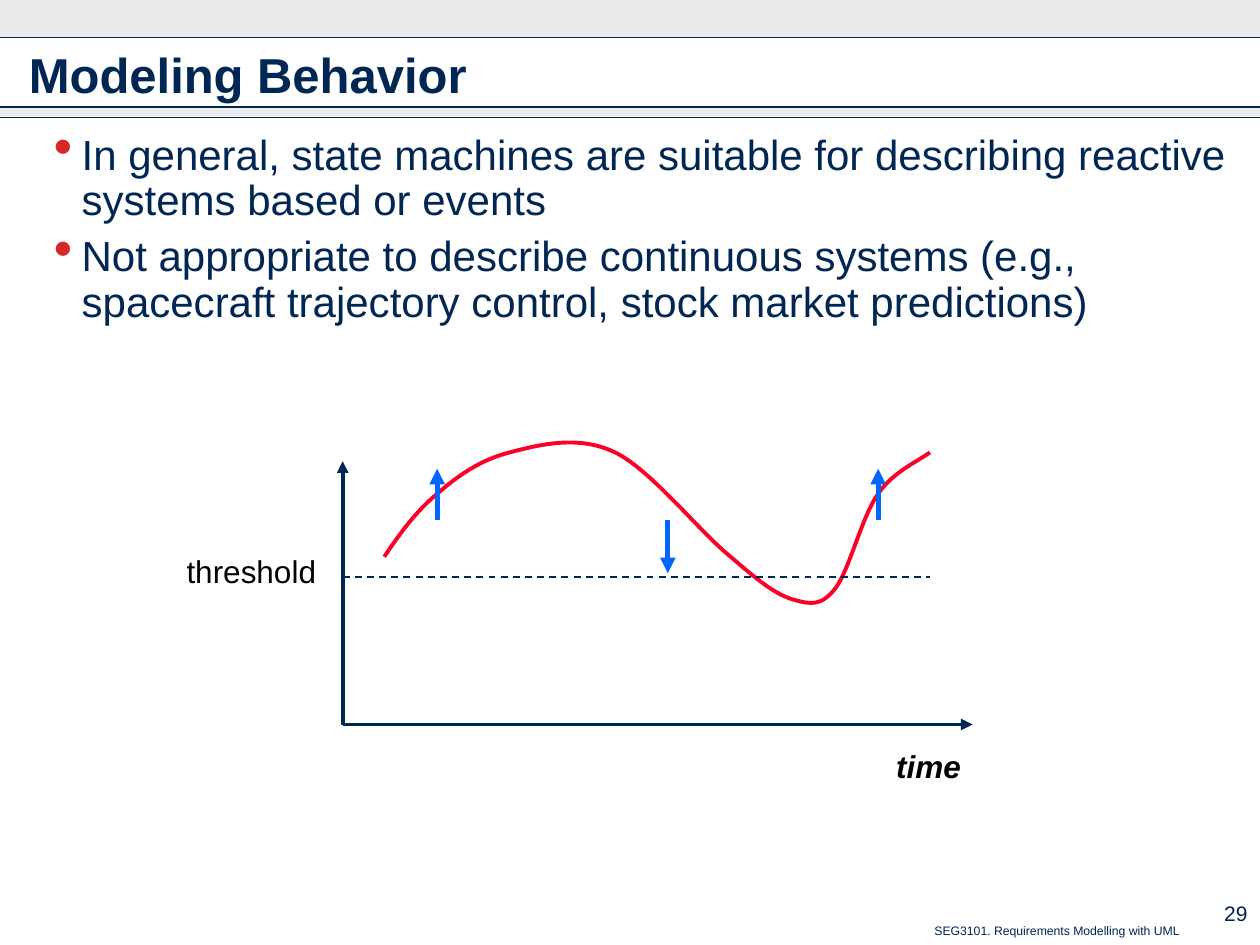
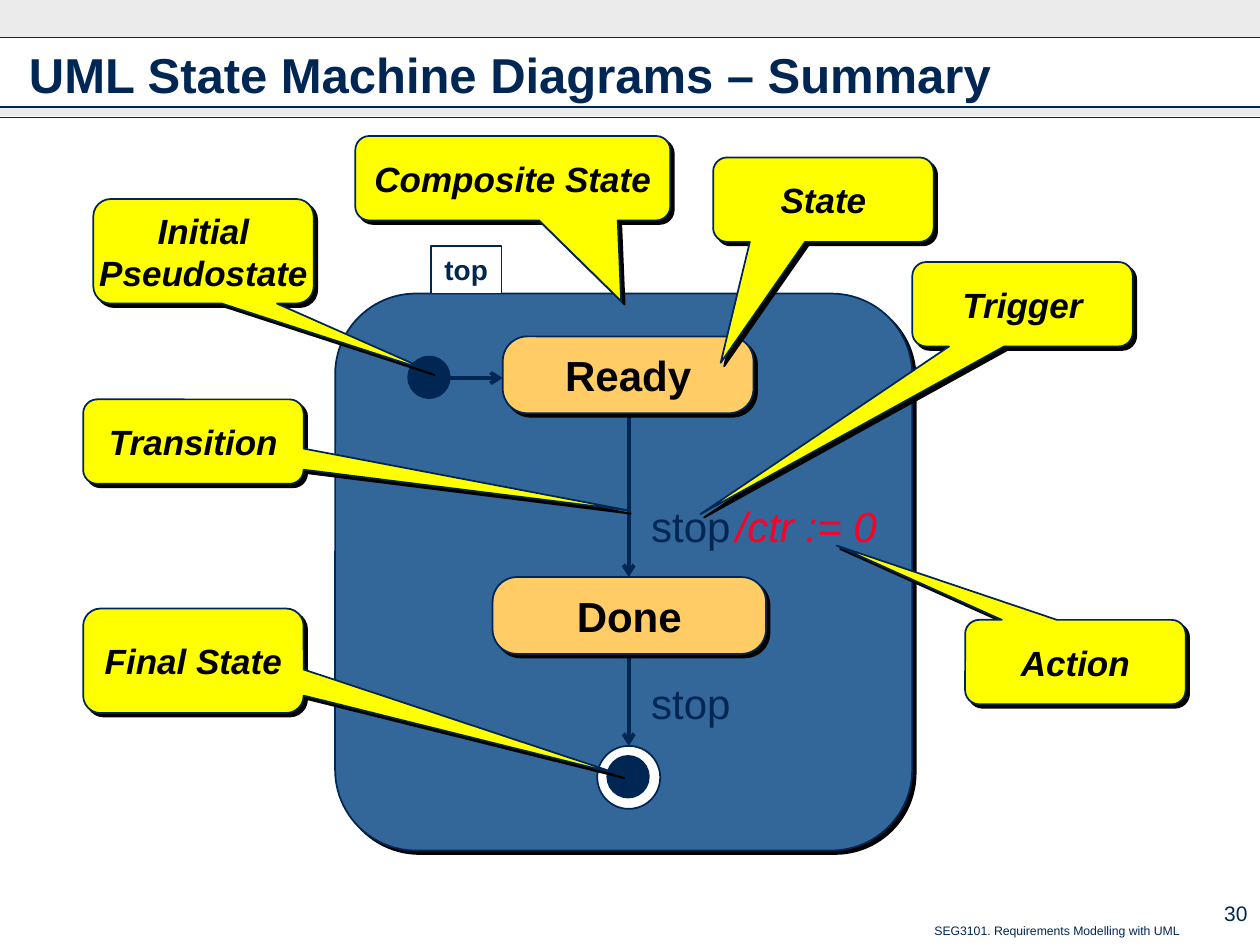
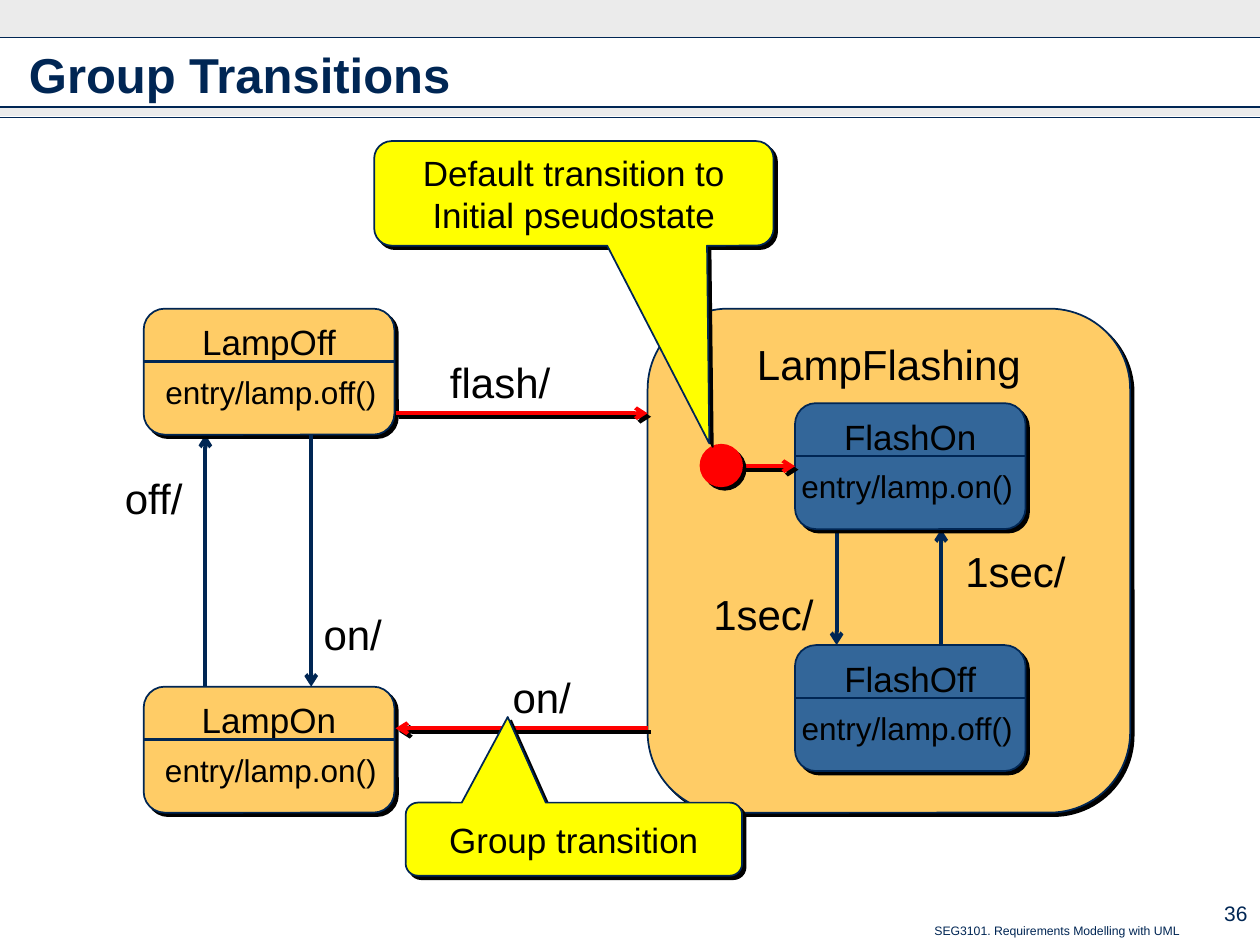
from dataclasses import dataclass
from typing import NamedTuple

from lxml.etree import SubElement
from pptx import Presentation
from pptx.dml.color import RGBColor
from pptx.enum.dml import MSO_LINE_DASH_STYLE as Dash
from pptx.enum.shapes import MSO_CONNECTOR as Connector, MSO_SHAPE as Preset
from pptx.enum.text import MSO_ANCHOR as Anchor, MSO_AUTO_SIZE as AutoSize, PP_ALIGN as Align
from pptx.oxml.ns import qn
from pptx.util import Emu, Pt

PX = 9144  # one hundred px to the inch
TITLE_ONLY = 5


class TextStyle(NamedTuple):
    size: int
    colour: RGBColor
    bold: bool = False
    italic: bool = False


@dataclass(frozen=True)
class Theme:
    font: str = "Arial"
    navy: RGBColor = RGBColor(0x00, 0x26, 0x54)
    black: RGBColor = RGBColor(0x00, 0x00, 0x00)
    white: RGBColor = RGBColor(0xFF, 0xFF, 0xFF)
    band: RGBColor = RGBColor(0xCD, 0xCD, 0xCD)
    bullet: str = "D62828"
    steel: RGBColor = RGBColor(0x33, 0x66, 0x99)
    sand: RGBColor = RGBColor(0xFF, 0xCC, 0x66)
    yellow: RGBColor = RGBColor(0xFF, 0xFF, 0x00)
    red: RGBColor = RGBColor(0xFF, 0x00, 0x00)
    crimson: RGBColor = RGBColor(0xFC, 0x01, 0x28)
    blue: RGBColor = RGBColor(0x00, 0x66, 0xFF)
    title: TextStyle = TextStyle(28, navy, bold=True)
    body: TextStyle = TextStyle(24, navy)
    footer: TextStyle = TextStyle(7, navy)
    number: TextStyle = TextStyle(12, navy)
    event: TextStyle = TextStyle(24, black)
    state: TextStyle = TextStyle(24, black, bold=True)
    state_name: TextStyle = TextStyle(20, black)
    small: TextStyle = TextStyle(18, black)
    axis: TextStyle = TextStyle(18, black, bold=True, italic=True)
    tab: TextStyle = TextStyle(16, navy, bold=True)
    callout: TextStyle = TextStyle(20, black, bold=True, italic=True)
    note: TextStyle = TextStyle(20, black)
    action: TextStyle = TextStyle(24, crimson, italic=True)


THEME = Theme()


class Box(NamedTuple):
    left: int
    top: int
    width: int
    height: int


class Label(NamedTuple):
    text: str
    box: Box
    style: TextStyle = THEME.event
    align: Align = Align.CENTER


class Line(NamedTuple):
    start: tuple[int, int]
    end: tuple[int, int]
    colour: RGBColor = THEME.navy
    width: float = 2.25
    head: str = "arrow"
    dashed: bool = False
    shadow: bool = False


class Callout(NamedTuple):
    text: str
    box: Box
    target: tuple[int, int]


class ActionState(NamedTuple):
    """A state with an entry action below a dividing line."""
    name: str
    action: str
    box: Box
    action_left: int
    fill: RGBColor


def px(length: int) -> Emu:
    return Emu(length * PX)


def add_shadow(effects) -> None:
    shadow = SubElement(effects, qn("a:outerShdw"), dist="35921", dir="2700000",
                        algn="ctr", rotWithShape="0")
    SubElement(shadow, qn("a:srgbClr"), val=str(THEME.black))


def write(shape, text: str, style: TextStyle, align: Align = Align.CENTER,
          anchor: Anchor = Anchor.MIDDLE, wrap: bool = False) -> None:
    frame = shape.text_frame
    frame.text = text
    frame.word_wrap = wrap
    frame.auto_size = AutoSize.NONE
    frame.vertical_anchor = anchor
    for paragraph in frame.paragraphs:
        paragraph.alignment = align
        for run in paragraph.runs:
            run.font.name = THEME.font
            run.font.size = Pt(style.size)
            run.font.bold = style.bold
            run.font.italic = style.italic
            run.font.color.rgb = style.colour


def add_box(slide, preset: Preset, box: Box, fill: RGBColor, outline: RGBColor | None = THEME.navy,
            shadow: bool = False, corner: float | None = None):
    shape = slide.shapes.add_shape(preset, *map(px, box))
    shape.fill.solid()
    shape.fill.fore_color.rgb = fill
    if outline is None:
        shape.line.fill.background()
    else:
        shape.line.color.rgb = outline
        shape.line.width = Pt(1)
    shape.shadow.inherit = False
    if shadow:
        add_shadow(shape._element.spPr.find(qn("a:effectLst")))
    if corner is not None:
        shape.adjustments[0] = corner
    return shape


def add_label(slide, label: Label) -> None:
    shape = slide.shapes.add_textbox(*map(px, label.box))
    write(shape, label.text, label.style, label.align)


def add_line(slide, line: Line) -> None:
    connector = slide.shapes.add_connector(Connector.STRAIGHT, *map(px, line.start + line.end))
    connector.line.color.rgb = line.colour
    connector.line.width = Pt(line.width)
    if line.dashed:
        connector.line.dash_style = Dash.DASH
    properties = connector._element.spPr
    SubElement(properties.find(qn("a:ln")), qn("a:tailEnd"), type=line.head)
    effects = SubElement(properties, qn("a:effectLst"))
    if line.shadow:
        add_shadow(effects)


def add_callout(slide, callout: Callout, style: TextStyle) -> None:
    box = callout.box
    shape = add_box(slide, Preset.ROUNDED_RECTANGULAR_CALLOUT, box, THEME.yellow, shadow=True)
    shape.adjustments[0] = (callout.target[0] - box.left) / box.width - 0.5
    shape.adjustments[1] = (callout.target[1] - box.top) / box.height - 0.5
    write(shape, callout.text, style)


def add_action_state(slide, state: ActionState) -> None:
    left, top, width, _ = state.box
    shape = add_box(slide, Preset.ROUNDED_RECTANGLE, state.box, state.fill, shadow=True)
    write(shape, state.name, THEME.state_name, anchor=Anchor.TOP)
    add_line(slide, Line((left, top + 42), (left + width, top + 42), width=1.5, head="none"))
    add_label(slide, Label(state.action, Box(state.action_left, top + 46, 188, 40), THEME.small))


def add_dot(slide, left: int, top: int, size: int, fill: RGBColor,
            outline: RGBColor = THEME.navy, shadow: bool = False) -> None:
    add_box(slide, Preset.OVAL, Box(left, top, size, size), fill, outline, shadow)


def add_curve(slide, points: list[tuple[int, int]]) -> None:
    """Draw cubic curves: a start, then two control points and an end for each."""
    builder = slide.shapes.build_freeform(*points[0], scale=PX)
    builder.add_line_segments(points[1:], close=False)
    shape = builder.convert_to_shape()
    path = shape._element.spPr.find(".//" + qn("a:path"))
    segments = path.findall(qn("a:lnTo"))
    for first in range(0, len(segments), 3):
        curve = SubElement(path, qn("a:cubicBezTo"))
        for segment in segments[first:first + 3]:
            curve.append(segment[0])
            path.remove(segment)
    shape.fill.background()
    shape.line.color.rgb = THEME.crimson
    shape.line.width = Pt(2.25)
    shape.shadow.inherit = False


def add_bullets(slide, box: Box, items: list[str]) -> None:
    shape = slide.shapes.add_textbox(*map(px, box))
    write(shape, "\n".join(items), THEME.body, Align.LEFT, Anchor.TOP, wrap=True)
    for index, paragraph in enumerate(shape.text_frame.paragraphs):
        properties = paragraph._p.get_or_add_pPr()
        properties.set("marL", str(px(42)))
        properties.set("indent", str(px(-22)))
        colour = SubElement(properties, qn("a:buClr"))
        SubElement(colour, qn("a:srgbClr"), val=THEME.bullet)
        SubElement(properties, qn("a:buSzPct"), val="130000")
        SubElement(properties, qn("a:buChar"), char="•")
        paragraph.line_spacing = Pt(26)
        if index:
            paragraph.space_before = Pt(6)


def start_slide(presentation, title: str, number: int):
    """Add a slide with the shared bands, rules, title, footer and number."""
    slide = presentation.slides.add_slide(presentation.slide_layouts[TITLE_ONLY])
    for top, height in ((0, 30), (85, 7)):
        band = add_box(slide, Preset.RECTANGLE, Box(0, top, 1000, height), THEME.band, None)
        colour = band._element.spPr.find(qn("a:solidFill"))[0]
        SubElement(colour, qn("a:alpha"), val="40000")
    for y in (85, 30, 93):
        add_line(slide, Line((0, y), (1000, y), width=0.75, head="none"))
    heading = slide.shapes.title
    heading.left, heading.top, heading.width, heading.height = map(px, Box(13, 26, 974, 66))
    write(heading, title, THEME.title, Align.LEFT, wrap=True)
    for text, box, style, anchor in (
        ("SEG3101. Requirements Modelling with UML", Box(325, 728, 621, 22), THEME.footer, Anchor.TOP),
        (str(number), Box(930, 708, 70, 34), THEME.number, Anchor.MIDDLE),
    ):
        shape = slide.shapes.add_textbox(*map(px, box))
        write(shape, text, style, Align.RIGHT, anchor, wrap=True)
    return slide


def build_behavior(presentation) -> None:
    slide = start_slide(presentation, "Modeling Behavior", 29)
    add_bullets(slide, Box(13, 101, 974, 610), [
        "In general, state machines are suitable for describing reactive systems based or events",
        "Not appropriate to describe continuous systems (e.g., spacecraft trajectory control, "
        "stock market predictions)",
    ])
    add_curve(slide, [
        (305, 442),
        (317, 424), (330, 406), (347, 392),
        (363, 378), (381, 365), (405, 359),
        (428, 353), (459, 345), (488, 359),
        (517, 373), (556, 423), (580, 442),
        (603, 462), (616, 472), (630, 476),
        (644, 480), (652, 481), (663, 467),
        (674, 453), (684, 410), (697, 392),
        (709, 374), (731, 365), (738, 359),
    ])
    origin = (272, 575)
    for end in ((272, 366), (772, 575)):
        add_line(slide, Line(origin, end, head="triangle"))
    for x, end in ((347, 372), (697, 372), (530, 455)):
        add_line(slide, Line((x, 413), (x, end), THEME.blue, 3, "triangle"))
    add_line(slide, Line((272, 458), (738, 458), width=1, head="none", dashed=True))
    add_label(slide, Label("time", Box(701, 588, 72, 40), THEME.axis))
    add_label(slide, Label("threshold", Box(138, 433, 123, 40), THEME.small))


def build_summary(presentation) -> None:
    slide = start_slide(presentation, "UML State Machine Diagrams – Summary", 30)
    add_box(slide, Preset.ROUNDED_RECTANGLE, Box(266, 233, 458, 442), THEME.steel,
            shadow=True, corner=0.145)
    tab = add_box(slide, Preset.RECTANGLE, Box(342, 195, 56, 38), THEME.white)
    write(tab, "top", THEME.tab)

    for start, end in (((499, 325), (499, 458)), ((499, 517), (499, 592)), ((341, 300), (399, 300))):
        add_line(slide, Line(start, end))
    for name, box in (("Ready", Box(399, 267, 199, 61)), ("Done", Box(391, 458, 217, 61))):
        state = add_box(slide, Preset.ROUNDED_RECTANGLE, box, THEME.sand, shadow=True, corner=0.32)
        write(state, name, THEME.state)
    for top in (392, 533):
        add_label(slide, Label("stop", Box(507, top, 83, 50), THEME.body, Align.LEFT))
    add_label(slide, Label("/ctr := 0", Box(574, 392, 132, 50), THEME.action, Align.LEFT))
    add_dot(slide, 324, 283, 33, THEME.navy)
    add_dot(slide, 474, 592, 50, THEME.white)
    add_dot(slide, 482, 600, 33, THEME.navy)

    for callout in (
        Callout("State", Box(566, 125, 175, 67), (572, 288)),
        Callout("Trigger", Box(724, 208, 175, 67), (556, 408)),
        Callout("Action", Box(766, 492, 175, 67), (664, 433)),
        Callout("Initial\nPseudostate", Box(74, 158, 175, 83), (342, 295)),
        Callout("Transition", Box(66, 317, 175, 67), (498, 405)),
        Callout("Final State", Box(66, 483, 175, 83), (493, 615)),
        Callout("Composite State", Box(282, 108, 250, 67), (493, 239)),
    ):
        add_callout(slide, callout, THEME.callout)


def build_group_transitions(presentation) -> None:
    slide = start_slide(presentation, "Group Transitions", 36)
    flashing = add_box(slide, Preset.ROUNDED_RECTANGLE, Box(514, 245, 383, 400), THEME.sand, shadow=True)
    write(flashing, "LampFlashing", THEME.event, anchor=Anchor.TOP)

    for start, end in (((664, 420), (664, 512)), ((747, 512), (747, 420)), ((163, 545), (163, 345))):
        add_line(slide, Line(start, end))
    for state in (
        ActionState("FlashOff", "entry/lamp.off()", Box(631, 512, 183, 100), 626, THEME.steel),
        ActionState("FlashOn", "entry/lamp.on()", Box(631, 320, 183, 100), 626, THEME.steel),
        ActionState("LampOff", "entry/lamp.off()", Box(114, 245, 199, 100), 121, THEME.sand),
        ActionState("LampOn", "entry/lamp.on()", Box(114, 545, 199, 100), 121, THEME.sand),
    ):
        add_action_state(slide, state)
    add_line(slide, Line((247, 345), (247, 545)))
    for start, end in (((572, 370), (631, 370)), ((314, 328), (514, 328)), ((514, 578), (314, 578))):
        add_line(slide, Line(start, end, THEME.red, shadow=True))
    add_dot(slide, 556, 353, 33, THEME.red, THEME.red, shadow=True)

    for label in (
        Label("1sec/", Box(556, 462, 100, 50)),
        Label("1sec/", Box(756, 428, 100, 50)),
        Label("off/", Box(89, 370, 66, 50)),
        Label("on/", Box(247, 478, 66, 50)),
        Label("flash/", Box(347, 278, 100, 50)),
        Label("on/", Box(397, 528, 66, 50)),
    ):
        add_label(slide, label)
    for callout in (
        Callout("Default transition to\nInitial pseudostate", Box(297, 112, 317, 83), (563, 352)),
        Callout("Group transition", Box(322, 637, 267, 58), (403, 569)),
    ):
        add_callout(slide, callout, THEME.note)


def main() -> None:
    presentation = Presentation()
    presentation.slide_width = px(1000)
    presentation.slide_height = px(750)
    build_behavior(presentation)
    build_summary(presentation)
    build_group_transitions(presentation)
    presentation.save("out.pptx")


if __name__ == "__main__":
    main()
